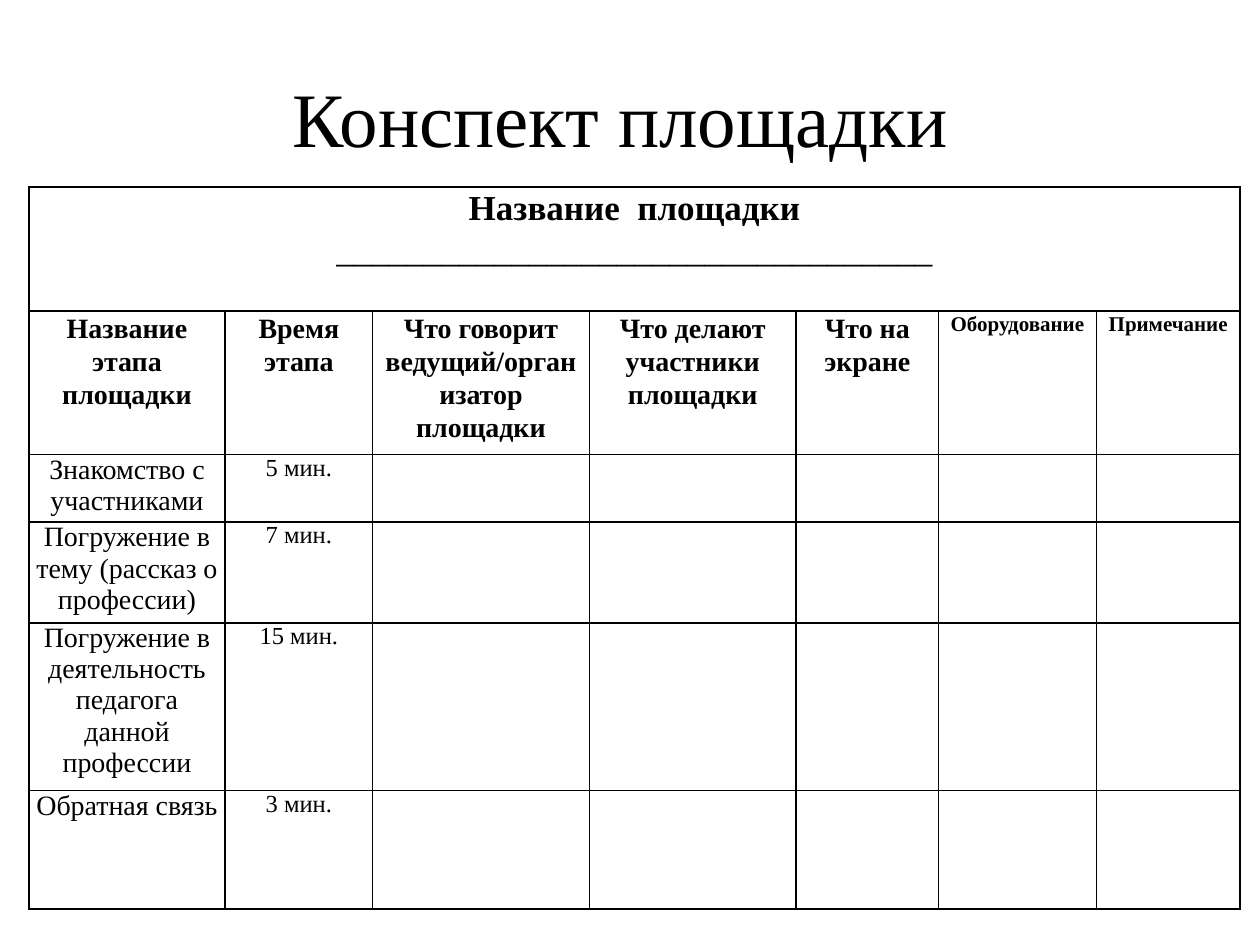
from lxml import etree
from pptx import Presentation
from pptx.dml.color import RGBColor
from pptx.enum.text import MSO_ANCHOR, PP_ALIGN
from pptx.oxml.ns import qn
from pptx.util import Cm, Pt

CENTER = PP_ALIGN.CENTER
MIDDLE = MSO_ANCHOR.MIDDLE
COLORS = {"ink": "000000", "paper": "FFFFFF"}
FONT = "Times New Roman"
BORDER = Pt(1)
HEADER_SPACING = 1.07

COLUMN_WIDTHS = [3.96, 2.97, 4.37, 4.17, 2.87, 3.18, 2.9]
ROW_HEIGHTS = [2.5, 2.68, 1.25, 1.89, 3.15, 2.38]
CELL_FORMAT = {
    "margin_left": Cm(0.13),
    "margin_right": Cm(0.13),
    "margin_top": 0,
    "margin_bottom": 0,
}
HEADERS = [
    ("Название этапа площадки", 16),
    ("Время этапа", 16),
    ("Что говорит ведущий/организатор площадки", 16),
    ("Что делают участники площадки", 16),
    ("Что на экране", 16),
    ("Оборудование", 12),
    ("Примечание", 12),
]
STAGES = [
    ("Знакомство с участниками", "5 мин."),
    ("Погружение в тему (рассказ о профессии)", "7 мин."),
    ("Погружение в деятельность педагога данной профессии", "15 мин."),
    ("Обратная связь", "3 мин."),
]


def apply_format(target, values):
    for name, value in values.items():
        setattr(target, name, value)


def write(paragraph, text, size, bold=False, spacing=None):
    apply_format(paragraph, {"alignment": CENTER, "line_spacing": spacing})
    run = paragraph.add_run()
    run.text = text
    apply_format(run.font, {"name": FONT, "size": Pt(size), "bold": bold})
    run.font.color.rgb = RGBColor.from_string(COLORS["ink"])


def add_title(slide):
    frame = slide.shapes.add_textbox(Cm(1.27), Cm(0.76), Cm(22.86), Cm(3.18)).text_frame
    apply_format(frame, {"word_wrap": True, "vertical_anchor": MIDDLE})
    write(frame.paragraphs[0], "Конспект площадки ", 44)


def style_cell(cell):
    apply_format(cell, CELL_FORMAT)
    cell.fill.solid()
    cell.fill.fore_color.rgb = RGBColor.from_string(COLORS["paper"])
    properties = cell._tc.get_or_add_tcPr()
    for position, side in enumerate(("lnL", "lnR", "lnT", "lnB")):
        line = etree.Element(qn(f"a:{side}"), w=str(BORDER))
        fill = etree.SubElement(line, qn("a:solidFill"))
        etree.SubElement(fill, qn("a:srgbClr"), val=COLORS["ink"])
        properties.insert(position, line)


def add_plan_grid(slide):
    plan = slide.shapes.add_table(
        len(ROW_HEIGHTS), len(COLUMN_WIDTHS), Cm(0.58), Cm(3.77),
        Cm(sum(COLUMN_WIDTHS)), Cm(sum(ROW_HEIGHTS)),
    ).table
    apply_format(plan, {"first_row": False, "horz_banding": False})
    for column, width in zip(plan.columns, COLUMN_WIDTHS):
        column.width = Cm(width)
    for row, height in zip(plan.rows, ROW_HEIGHTS):
        row.height = Cm(height)
    for cell in plan.iter_cells():
        style_cell(cell)
    plan.cell(0, 0).merge(plan.cell(0, len(COLUMN_WIDTHS) - 1))
    return plan


def fill_plan(plan):
    heading = plan.cell(0, 0).text_frame
    write(heading.paragraphs[0], "Название  площадки", 20, True, HEADER_SPACING)
    write(heading.add_paragraph(), "_" * 34, 20, False, HEADER_SPACING)
    for column, (header, size) in enumerate(HEADERS):
        paragraph = plan.cell(1, column).text_frame.paragraphs[0]
        write(paragraph, header, size, True, HEADER_SPACING)
    for row, (stage, duration) in enumerate(STAGES, start=2):
        write(plan.cell(row, 0).text_frame.paragraphs[0], stage, 16)
        write(plan.cell(row, 1).text_frame.paragraphs[0], duration, 14)


def main():
    presentation = Presentation()
    apply_format(presentation, {"slide_width": Cm(25.4), "slide_height": Cm(19.05)})
    slide = presentation.slides.add_slide(presentation.slide_layouts[6])
    add_title(slide)
    fill_plan(add_plan_grid(slide))
    presentation.save("out.pptx")


if __name__ == "__main__":
    main()
